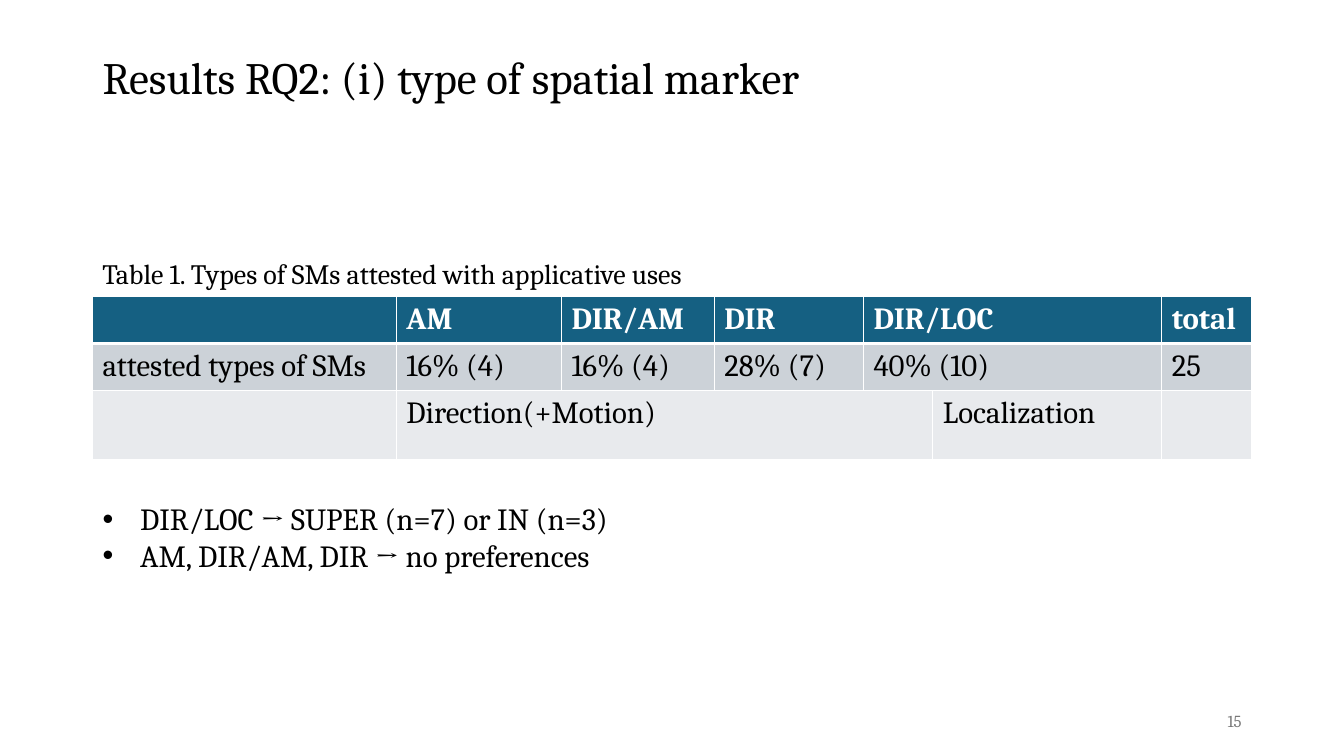
from lxml.etree import SubElement
from pptx import Presentation
from pptx.dml.color import RGBColor
from pptx.enum.text import MSO_ANCHOR, MSO_AUTO_SIZE, PP_ALIGN
from pptx.oxml.ns import qn
from pptx.util import Cm, Pt

FONT = "Cambria"
BLACK = RGBColor(0x00, 0x00, 0x00)
WHITE = RGBColor(0xFF, 0xFF, 0xFF)
GREY = RGBColor(0x79, 0x79, 0x79)
HEADER_BLUE = RGBColor(0x15, 0x60, 0x82)
BAND_DARK = RGBColor(0xCC, 0xD2, 0xD8)
BAND_LIGHT = RGBColor(0xE8, 0xEA, 0xED)

LEFT, WIDTH = Cm(2.33), Cm(29.21)
COLUMN_WIDTHS = [7.66, 4.16, 3.85, 3.76, 1.75, 5.77, 2.26]
ROW_HEIGHTS = [1.17, 1.17, 1.75]
# Each cell is (text, number of columns it spans)
ROWS = [
    [("", 1), ("AM", 1), ("DIR/AM", 1), ("DIR", 1), ("DIR/LOC", 2), ("total", 1)],
    [("attested types of SMs", 1), ("16% (4)", 1), ("16% (4)", 1),
     ("28% (7)", 1), ("40% (10)", 2), ("25", 1)],
    [("", 1), ("Direction(+Motion)", 4), ("Localization", 1), ("", 1)],
]
FINDINGS = ["DIR/LOC → SUPER (n=7) or IN (n=3)", "AM, DIR/AM, DIR → no preferences"]


def place(sp, left, top, width, height):
    sp.left, sp.top, sp.width, sp.height = left, top, width, height


def format_runs(tf, size, color=BLACK, bold=False):
    for p in tf.paragraphs:
        for r in p.runs:
            r.font.name, r.font.size, r.font.bold = FONT, Pt(size), bold
            r.font.color.rgb = color


def add_title(slide, left, top, width, height):
    sp = slide.shapes.title
    place(sp, left, top, width, height)
    tf = sp.text_frame
    tf.text = "Results RQ2: (i) type of spatial marker"
    tf.auto_size = MSO_AUTO_SIZE.NONE
    tf.vertical_anchor = MSO_ANCHOR.MIDDLE
    p = tf.paragraphs[0]
    p.alignment, p.line_spacing = PP_ALIGN.LEFT, 0.9
    format_runs(tf, 32)


def add_label(slide, text, left, top, width, height, size, color=BLACK,
              align=PP_ALIGN.LEFT, anchor=MSO_ANCHOR.TOP):
    tf = slide.shapes.add_textbox(left, top, width, height).text_frame
    tf.word_wrap = True
    tf.text = text
    tf.vertical_anchor = anchor
    tf.paragraphs[0].alignment = align
    format_runs(tf, size, color)


def style_cell(cell, fill, bottom):
    # Borders must come before the fill in the cell properties
    tcPr = cell._tc.get_or_add_tcPr()
    for side, width in (("L", 1), ("R", 1), ("T", 1), ("B", bottom)):
        ln = SubElement(tcPr, qn(f"a:ln{side}"), w=str(Pt(width)))
        SubElement(SubElement(ln, qn("a:solidFill")), qn("a:srgbClr"), val=str(WHITE))
    cell.fill.solid()
    cell.fill.fore_color.rgb = fill


def add_marker_table(slide, left, top, width, height):
    table = slide.shapes.add_table(len(ROWS), len(COLUMN_WIDTHS),
                                   left, top, width, height).table
    for column, w in zip(table.columns, COLUMN_WIDTHS):
        column.width = Cm(w)
    for row, h in zip(table.rows, ROW_HEIGHTS):
        row.height = Cm(h)
    fills = (HEADER_BLUE, BAND_DARK, BAND_LIGHT)
    for i, (cells, fill) in enumerate(zip(ROWS, fills)):
        header = i == 0
        j = 0
        for text, span in cells:
            cell = table.cell(i, j)
            if span > 1:
                cell.merge(table.cell(i, j + span - 1))
            cell.text = text
            style_cell(cell, fill, 3 if header else 1)
            format_runs(cell.text_frame, 22, WHITE if header else BLACK, header)
            j += span


def add_findings(slide, left, top, width, height):
    sp = slide.placeholders[1]
    place(sp, left, top, width, height)
    tf = sp.text_frame
    tf.text = "\n".join(FINDINGS)
    tf.auto_size = MSO_AUTO_SIZE.NONE
    for p in tf.paragraphs:
        p.space_before = Pt(0)
        pPr = p._p.get_or_add_pPr()
        pPr.set("marL", str(Cm(0.95)))
        pPr.set("indent", str(-Cm(0.95)))
        SubElement(pPr, qn("a:buFont"), typeface="Arial")
        SubElement(pPr, qn("a:buChar"), char="•")
    format_runs(tf, 22)


def build_results_slide(prs):
    slide = prs.slides.add_slide(prs.slide_layouts[1])
    add_title(slide, LEFT, Cm(1.01), WIDTH, Cm(2.03))
    # Caption and table
    add_label(slide, "Table 1. Types of SMs attested with applicative uses",
              LEFT, Cm(6.35), WIDTH, Cm(1.11), 20)
    add_marker_table(slide, LEFT, Cm(7.47), WIDTH, Cm(sum(ROW_HEIGHTS)))
    add_findings(slide, LEFT, Cm(12.47), WIDTH, Cm(2.13))
    # Slide number
    number_width = Cm(7.62)
    add_label(slide, "15", LEFT + WIDTH - number_width, Cm(17.65), number_width,
              Cm(1.01), 12, GREY, PP_ALIGN.RIGHT, MSO_ANCHOR.MIDDLE)


def main():
    prs = Presentation()
    prs.slide_width, prs.slide_height = Cm(33.87), Cm(19.05)
    build_results_slide(prs)
    prs.save("out.pptx")


if __name__ == "__main__":
    main()
